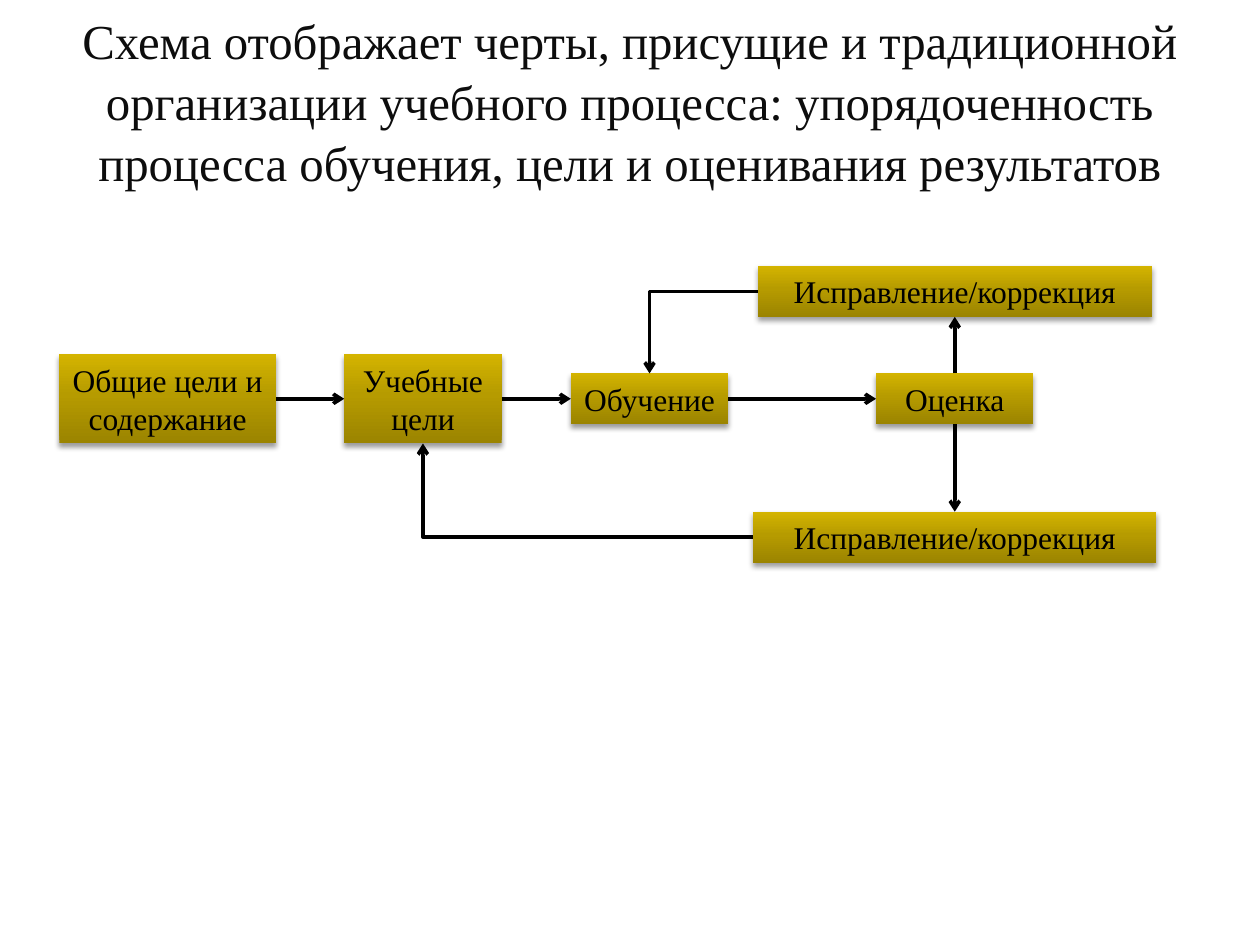
"""Build a slide with a flow chart of the traditional learning process."""
import copy
from dataclasses import dataclass

import pptx
import pptx.dml.color
import pptx.enum.shapes
import pptx.enum.text
import pptx.oxml
import pptx.oxml.ns
import pptx.shapes.autoshape
import pptx.slide
import pptx.util

Pt = pptx.util.Pt
RGBColor = pptx.dml.color.RGBColor
qn = pptx.oxml.ns.qn

FONT = "Times New Roman"
BLACK = RGBColor(0x00, 0x00, 0x00)
TITLE_COLOR = RGBColor(0x0D, 0x0D, 0x0D)
GOLD_DARK = RGBColor(0x9B, 0x84, 0x00)
GOLD_MID = RGBColor(0xB6, 0x9B, 0x00)
GOLD_LIGHT = RGBColor(0xD4, 0xB4, 0x00)
NS = 'xmlns:a="http://schemas.openxmlformats.org/drawingml/2006/main"'
SHADOW = (
    f'<a:effectLst {NS}><a:outerShdw blurRad="39370" dist="25400" dir="5400000" '
    'rotWithShape="0"><a:srgbClr val="000000"><a:alpha val="38000"/></a:srgbClr>'
    "</a:outerShdw></a:effectLst>"
)
TOP, LEFT, BOTTOM, RIGHT = range(4)
ROW_Y = 227.9
EVAL_X = 545.6
LOW, TALL = 29.1, 51.1
STEP_W = 90
TITLE = (
    "Схема отображает черты, присущие и традиционной организации учебного "
    "процесса: упорядоченность процесса обучения, цели и оценивания результатов"
)


@dataclass
class Box:
    """A labelled box given by its centre and size."""

    text: str
    cx: float
    cy: float
    width: float
    height: float


@dataclass
class Arrow:
    """An arrow between connection sites of two boxes."""

    start: str
    start_site: int
    end: str
    end_site: int
    bent: bool = False


BOXES = {
    "aims": Box("Общие цели и содержание", 95.8, ROW_Y, 123.8, TALL),
    "goals": Box("Учебные цели", 241.7, ROW_Y, STEP_W, TALL),
    "learning": Box("Обучение", 371.2, ROW_Y, STEP_W, LOW),
    "evaluation": Box("Оценка", EVAL_X, ROW_Y, STEP_W, LOW),
    "fix_goals": Box("Исправление/коррекция", EVAL_X, 307, 230.4, LOW),
    "fix_learning": Box("Исправление/коррекция", EVAL_X, 166.5, 225.4, LOW),
}
ARROWS = [
    Arrow("aims", RIGHT, "goals", LEFT),
    Arrow("goals", RIGHT, "learning", LEFT),
    Arrow("learning", RIGHT, "evaluation", LEFT),
    Arrow("evaluation", BOTTOM, "fix_goals", TOP),
    Arrow("evaluation", TOP, "fix_learning", BOTTOM),
    Arrow("fix_learning", LEFT, "learning", TOP, bent=True),
    Arrow("fix_goals", LEFT, "goals", BOTTOM, bent=True),
]


def write(tf: pptx.text.text.TextFrame, text: str, size: float, color: RGBColor) -> None:
    """Put one centred run into a text frame."""
    tf.word_wrap = True
    tf.vertical_anchor = pptx.enum.text.MSO_ANCHOR.MIDDLE
    p = tf.paragraphs[0]
    p.alignment = pptx.enum.text.PP_ALIGN.CENTER
    r = p.add_run()
    r.text = text
    r.font.name = FONT
    r.font.size = Pt(size)
    r.font.color.rgb = color


def add_title(s: pptx.slide.Slide) -> None:
    """Place and fill the title placeholder."""
    sp = s.shapes.title
    sp.left, sp.top, sp.width, sp.height = Pt(36), Pt(11.5), Pt(648), Pt(101.5)
    tf = sp.text_frame
    write(tf, TITLE, 27.9, TITLE_COLOR)
    tf.auto_size = pptx.enum.text.MSO_AUTO_SIZE.NONE
    tf.margin_bottom = Pt(14.4)
    tf.paragraphs[0].line_spacing = 1.04


def fill_gold(sp: pptx.shapes.autoshape.Shape) -> None:
    """Give a shape the three-stop gold gradient."""
    sp.fill.gradient()
    sp.fill.gradient_angle = 90
    first = sp._element.spPr.find(".//" + qn("a:gs"))
    first.addnext(copy.deepcopy(first))
    colors = (GOLD_DARK, GOLD_MID, GOLD_LIGHT)
    for stop, color, position in zip(sp.fill.gradient_stops, colors, (0, 0.55, 1)):
        stop.color.rgb = color
        stop.position = position


def add_box(s: pptx.slide.Slide, box: Box) -> pptx.shapes.autoshape.Shape:
    """Draw one labelled box."""
    sp = s.shapes.add_shape(
        pptx.enum.shapes.MSO_SHAPE.RECTANGLE,
        Pt(box.cx - box.width / 2), Pt(box.cy - box.height / 2),
        Pt(box.width), Pt(box.height),
    )
    fill_gold(sp)
    sp.line.fill.background()
    sp._element.spPr.append(pptx.oxml.parse_xml(SHADOW))
    write(sp.text_frame, box.text, 18, BLACK)
    return sp


def add_arrow(
    s: pptx.slide.Slide, arrow: Arrow, shapes: dict[str, pptx.shapes.autoshape.Shape]
) -> None:
    """Connect two boxes with an arrow."""
    kinds = pptx.enum.shapes.MSO_CONNECTOR
    kind = kinds.ELBOW if arrow.bent else kinds.STRAIGHT
    c = s.shapes.add_connector(kind, 0, 0, 0, 0)
    c.begin_connect(shapes[arrow.start], arrow.start_site)
    c.end_connect(shapes[arrow.end], arrow.end_site)
    c.line.width = Pt(2)
    c.line.color.rgb = BLACK
    spPr = c._element.spPr
    if arrow.bent:
        spPr.find(qn("a:prstGeom")).set("prst", "bentConnector2")
    spPr.find(qn("a:ln")).append(pptx.oxml.parse_xml(f'<a:tailEnd {NS} type="arrow"/>'))
    spPr.append(pptx.oxml.parse_xml(f"<a:effectLst {NS}/>"))


def main() -> None:
    """Build and save the presentation."""
    prs = pptx.Presentation()
    prs.slide_width, prs.slide_height = Pt(720), Pt(540)
    s = prs.slides.add_slide(prs.slide_layouts[5])
    add_title(s)
    shapes = {name: add_box(s, box) for name, box in BOXES.items()}
    for arrow in ARROWS:
        add_arrow(s, arrow, shapes)
    prs.save("out.pptx")


if __name__ == "__main__":
    main()
